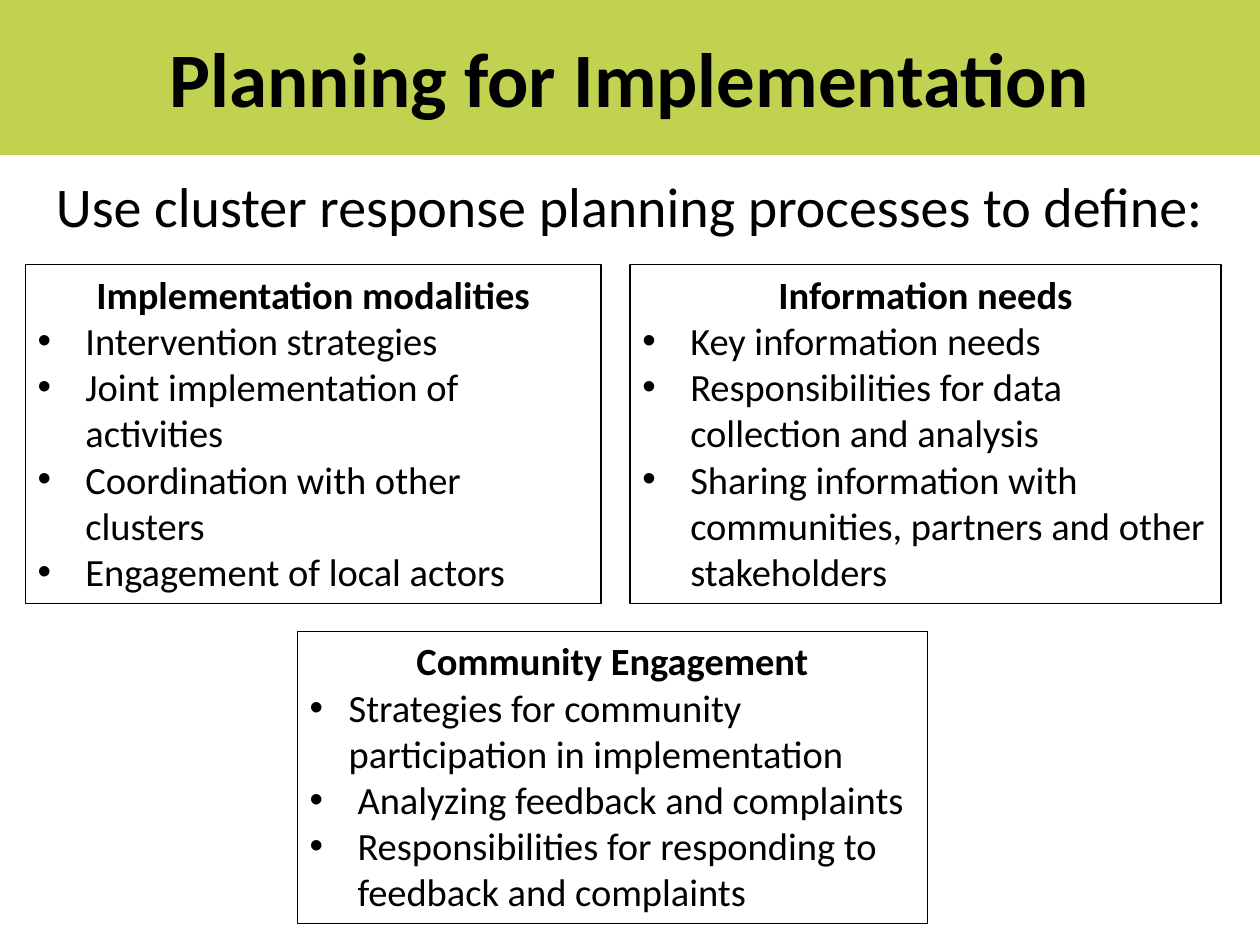
from dataclasses import dataclass

from lxml.etree import SubElement
from pptx import Presentation
from pptx.dml.color import RGBColor as Color
from pptx.enum.shapes import MSO_SHAPE as Shape
from pptx.enum.text import MSO_ANCHOR as Anchor, MSO_AUTO_SIZE as AutoSize, PP_ALIGN as Align
from pptx.oxml.ns import qn
from pptx.util import Inches, Pt


@dataclass(frozen=True)
class Theme:
    font: str = "Calibri"
    ink: str = "000000"
    band: str = "C1D150"
    title: int = 44
    lead: int = 32
    body: int = 22
    border: float = 0.75
    cell: float = 0.1


class SlideBuilder:
    def __init__(self, page, theme):
        self.page = page
        self.theme = theme

    def place(self, area):
        return [Inches(units * self.theme.cell) for units in area]

    def add_text(self, para, text, size, bold=False, align=Align.CENTER):
        para.alignment = align
        span = para.add_run()
        span.text = text
        formats = {"name": self.theme.font, "size": Pt(size), "bold": bold}
        for name, value in formats.items():
            setattr(span.font, name, value)
        span.font.color.rgb = Color.from_string(self.theme.ink)

    def frame(self, box, **formats):
        for name, value in {"word_wrap": True, **formats}.items():
            setattr(box.text_frame, name, value)
        return box.text_frame

    def rectangle(self, area):
        box = self.page.shapes.add_shape(Shape.RECTANGLE, *self.place(area))
        box.shadow.inherit = False
        return box

    def banner(self, area, text):
        box = self.rectangle(area)
        box.fill.solid()
        box.fill.fore_color.rgb = Color.from_string(self.theme.band)
        box.line.fill.background()
        frame = self.frame(box, vertical_anchor=Anchor.MIDDLE)
        self.add_text(frame.paragraphs[0], text, self.theme.title, bold=True)

    def lead(self, area, text):
        box = self.page.shapes.add_textbox(*self.place(area))
        frame = self.frame(box, auto_size=AutoSize.SHAPE_TO_FIT_TEXT)
        self.add_text(frame.paragraphs[0], text, self.theme.lead)

    def bullet(self, frame, text, indent):
        para = frame.add_paragraph()
        properties = para._p.get_or_add_pPr()
        properties.set("marL", str(Inches(indent)))
        properties.set("indent", str(-Inches(indent)))
        SubElement(properties, qn("a:buFont"), typeface="Arial")
        SubElement(properties, qn("a:buChar"), char="•")
        self.add_text(para, text, self.theme.body, align=Align.LEFT)

    def card(self, area, heading, items):
        box = self.rectangle(area)
        box.fill.background()
        box.line.color.rgb = Color.from_string(self.theme.ink)
        box.line.width = Pt(self.theme.border)
        frame = self.frame(box, vertical_anchor=Anchor.TOP, auto_size=AutoSize.SHAPE_TO_FIT_TEXT)
        self.add_text(frame.paragraphs[0], heading, self.theme.body, bold=True)
        for text, indent in items:
            self.bullet(frame, text, indent)


WIDE, NARROW = 0.38, 0.31
CARDS = [
    ((2, 21, 45.7, 26.9), "Implementation modalities", [
        ("Intervention strategies", WIDE),
        ("Joint implementation of activities", WIDE),
        ("Coordination with other clusters", WIDE),
        ("Engagement of local actors", WIDE),
    ]),
    ((50, 21, 46.9, 26.9), "Information needs", [
        ("Key information needs", WIDE),
        ("Responsibilities for data collection and analysis", WIDE),
        ("Sharing information with communities, partners and other stakeholders", WIDE),
    ]),
    ((23.6, 50.1, 50, 23.2), "Community Engagement", [
        ("Strategies for community participation in implementation", NARROW),
        ("Analyzing feedback and complaints", WIDE),
        ("Responsibilities for responding to feedback and complaints", WIDE),
    ]),
]


def main():
    deck = Presentation()
    deck.slide_width, deck.slide_height = Inches(10), Inches(7.5)
    builder = SlideBuilder(deck.slides.add_slide(deck.slide_layouts[6]), Theme())
    builder.banner((0, -0.2, 100, 12.5), "Planning for Implementation")
    builder.lead((0, 13.1, 100, 6.4), "Use cluster response planning processes to define:")
    for area, heading, items in CARDS:
        builder.card(area, heading, items)
    deck.save("out.pptx")


if __name__ == "__main__":
    main()
